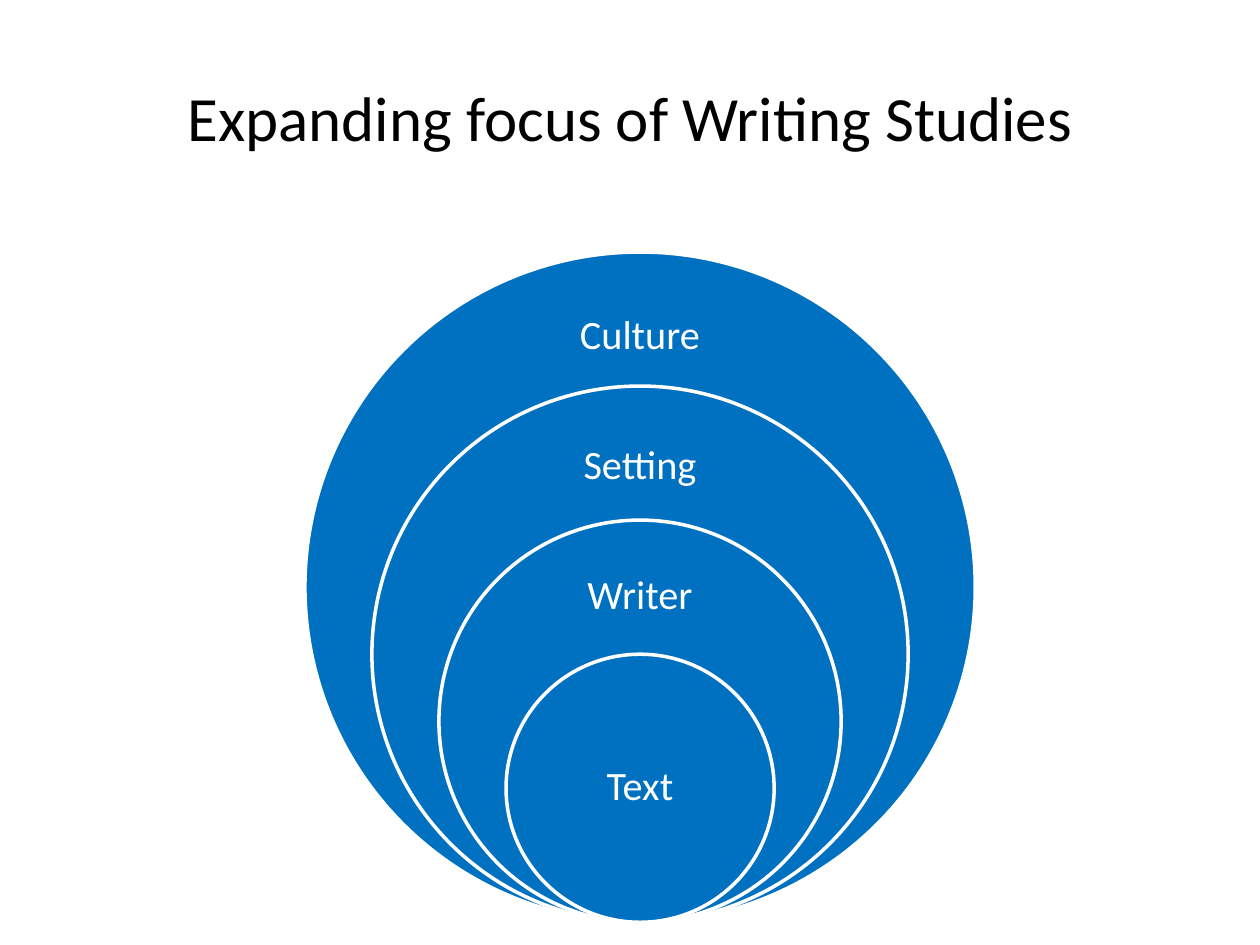
import dataclasses

import pptx
import pptx.dml.color
import pptx.enum.shapes
import pptx.enum.text
import pptx.util

Inches = pptx.util.Inches
Pt = pptx.util.Pt
RGBColor = pptx.dml.color.RGBColor


@dataclasses.dataclass(frozen=True)
class Theme:
    font: str = "Calibri"
    title_size: int = 36
    label_size: int = 23
    ink: RGBColor = RGBColor(0x00, 0x00, 0x00)
    paper: RGBColor = RGBColor(0xFF, 0xFF, 0xFF)
    circle: RGBColor = RGBColor(0x00, 0x70, 0xC0)


class SlideBuilder:
    def __init__(self, slide, theme):
        self.slide = slide
        self.theme = theme

    def centered_text(self, text_frame, text, size, color):
        text_frame.word_wrap = True
        text_frame.vertical_anchor = pptx.enum.text.MSO_ANCHOR.MIDDLE
        paragraph = text_frame.paragraphs[0]
        paragraph.alignment = pptx.enum.text.PP_ALIGN.CENTER
        run = paragraph.add_run()
        run.text = text
        run.font.name = self.theme.font
        run.font.size = Pt(size)
        run.font.color.rgb = color
        return paragraph

    def title(self, text, left, top, width, height):
        shape = self.slide.shapes.title
        shape.left, shape.top = Inches(left), Inches(top)
        shape.width, shape.height = Inches(width), Inches(height)
        self.centered_text(shape.text_frame, text, self.theme.title_size, self.theme.ink)

    def circle(self, group, left, top, diameter):
        shape = group.shapes.add_shape(
            pptx.enum.shapes.MSO_SHAPE.OVAL,
            Inches(left), Inches(top), Inches(diameter), Inches(diameter))
        shape.shadow.inherit = False
        shape.fill.solid()
        shape.fill.fore_color.rgb = self.theme.circle
        shape.line.color.rgb = self.theme.paper
        shape.line.width = Pt(2)

    def label(self, group, text, left, top, width, height):
        box = group.shapes.add_textbox(
            Inches(left), Inches(top), Inches(width), Inches(height))
        frame = box.text_frame
        frame.margin_left = frame.margin_right = Inches(0.18)
        frame.margin_top = frame.margin_bottom = Inches(0.18)
        paragraph = self.centered_text(
            frame, text, self.theme.label_size, self.theme.paper)
        paragraph.line_spacing = 0.9

    def stacked_circles(self, levels, center, bottom, outer_diameter):
        """Nest circles on one bottom point; each level is (text, label top, label height)."""
        group = self.slide.shapes.add_group_shape()
        label_width = 1.5
        step = outer_diameter / (len(levels) + 1)
        for index, (text, label_top, label_height) in enumerate(levels):
            diameter = outer_diameter - index * step
            self.circle(group, center - diameter / 2, bottom - diameter, diameter)
            self.label(group, text, center - label_width / 2, label_top,
                       label_width, label_height)


def main():
    presentation = pptx.Presentation()
    presentation.slide_width = Inches(10)
    presentation.slide_height = Inches(7.5)
    title_only = presentation.slide_layouts[5]
    builder = SlideBuilder(presentation.slides.add_slide(title_only), Theme())

    builder.title("Expanding focus of Writing Studies", 0.5, 0.3, 9, 1.25)
    levels = [
        ("Culture", 2.27, 0.8),
        ("Setting", 3.32, 0.77),
        ("Writer", 4.37, 0.72),
        ("Text", 5.72, 1.06),
    ]
    builder.stacked_circles(levels, center=5.08, bottom=7.32, outer_diameter=5.32)

    presentation.save("out.pptx")


if __name__ == "__main__":
    main()
